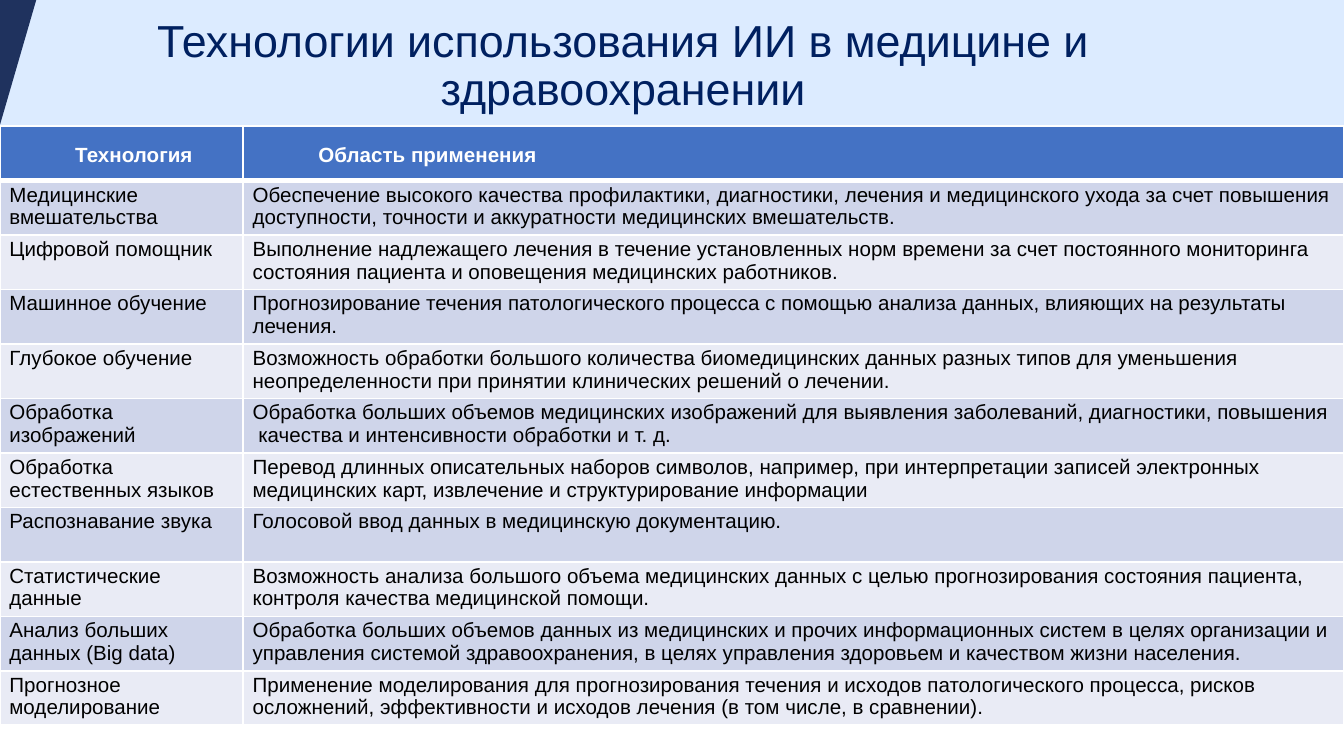
from typing import NamedTuple

from lxml import etree
from pptx import Presentation
from pptx.dml.color import RGBColor
from pptx.enum.shapes import MSO_SHAPE
from pptx.enum.text import MSO_ANCHOR, PP_ALIGN
from pptx.oxml.ns import qn
from pptx.util import Inches, Pt

RECTANGLE = MSO_SHAPE.RECTANGLE
TOP, MIDDLE = MSO_ANCHOR.TOP, MSO_ANCHOR.MIDDLE
CENTER = PP_ALIGN.CENTER

WHITE = RGBColor(0xFF, 0xFF, 0xFF)
BLACK = RGBColor(0x00, 0x00, 0x00)
PALE_BLUE = RGBColor(0xDC, 0xEB, 0xFF)
NAVY = RGBColor(0x1F, 0x32, 0x5E)
TITLE_BLUE = RGBColor(0x00, 0x20, 0x60)
HEADER_BLUE = RGBColor(0x44, 0x72, 0xC4)
BANDS = (RGBColor(0xCF, 0xD5, 0xEA), RGBColor(0xE9, 0xEB, 0xF5))

FONT = "Arial"
SLIDE_WIDTH = Inches(10)
SLIDE_HEIGHT = SLIDE_WIDTH * 9 // 16
BANNER_HEIGHT = Inches(0.93)
TABLE_TOP, TABLE_HEIGHT = Inches(0.94), Inches(4.46)
COLUMN_WIDTHS = (Inches(1.81), Inches(8.19))
THIN, THICK = Pt(1), Pt(3)


class Technology(NamedTuple):
    name: str
    use: str


HEADER = Technology("Технология", "Область применения")
TECHNOLOGIES = [
    Technology("Медицинские вмешательства",
               "Обеспечение высокого качества профилактики, диагностики, лечения и медицинского ухода "
               "за счет повышения доступности, точности и аккуратности медицинских вмешательств."),
    Technology("Цифровой помощник",
               "Выполнение надлежащего лечения в течение установленных норм времени за счет постоянного "
               "мониторинга состояния пациента и оповещения медицинских работников."),
    Technology("Машинное обучение",
               "Прогнозирование течения патологического процесса с помощью анализа данных, "
               "влияющих на результаты лечения."),
    Technology("Глубокое обучение",
               "Возможность обработки большого количества биомедицинских данных разных типов "
               "для уменьшения неопределенности при принятии клинических решений о лечении."),
    Technology("Обработка изображений",
               "Обработка больших объемов медицинских изображений для выявления заболеваний, "
               "диагностики, повышения  качества и интенсивности обработки и т. д."),
    Technology("Обработка естественных языков",
               "Перевод длинных описательных наборов символов, например, при интерпретации записей "
               "электронных медицинских карт, извлечение и структурирование информации"),
    Technology("Распознавание звука",
               "Голосовой ввод данных в медицинскую документацию."),
    Technology("Статистические данные",
               "Возможность анализа большого объема медицинских данных с целью прогнозирования "
               "состояния пациента, контроля качества медицинской помощи."),
    Technology("Анализ больших данных (Big data)",
               "Обработка больших объемов данных из медицинских и прочих информационных систем в целях "
               "организации и управления системой здравоохранения, в целях управления здоровьем "
               "и качеством жизни населения."),
    Technology("Прогнозное моделирование",
               "Применение моделирования для прогнозирования течения и исходов патологического процесса, "
               "рисков осложнений, эффективности и исходов лечения (в том числе, в сравнении)."),
]


def add_run(p, text: str, size: float, color: RGBColor, bold: bool = False) -> None:
    r = p.add_run()
    r.text = text
    r.font.name, r.font.size, r.font.bold = FONT, Pt(size), bold
    r.font.color.rgb = color


def paint(sp, color: RGBColor) -> None:
    sp.shadow.inherit = False
    sp.fill.solid()
    sp.fill.fore_color.rgb = color
    sp.line.fill.background()


def draw_banner(s) -> None:
    paint(s.shapes.add_shape(RECTANGLE, 0, 0, SLIDE_WIDTH, BANNER_HEIGHT), PALE_BLUE)
    builder = s.shapes.build_freeform(0, 0)
    builder.add_line_segments([(Inches(0.27), 0), (0, BANNER_HEIGHT)], close=True)
    paint(builder.convert_to_shape(), NAVY)


def draw_title(s, text: str) -> None:
    tf = s.shapes.add_textbox(Inches(0.69), Inches(0.09), Inches(7.89), Inches(0.5)).text_frame
    tf.word_wrap = True
    tf.vertical_anchor = TOP
    p = tf.paragraphs[0]
    p.alignment = CENTER
    p.line_spacing = 0.9
    add_run(p, text, 24, TITLE_BLUE)


def set_borders(cell, top: int, bottom: int) -> None:
    tc_pr = cell._tc.get_or_add_tcPr()
    for side, width in (("L", THIN), ("R", THIN), ("T", top), ("B", bottom)):
        line = etree.SubElement(tc_pr, qn(f"a:ln{side}"), w=str(width))
        fill = etree.SubElement(line, qn("a:solidFill"))
        etree.SubElement(fill, qn("a:srgbClr"), val=str(WHITE))


def fill_cell(cell, text: str, row: int) -> None:
    is_header = row == 0
    set_borders(cell, THICK if row == 1 else THIN, THICK if is_header else THIN)
    cell.fill.solid()
    cell.fill.fore_color.rgb = HEADER_BLUE if is_header else BANDS[(row - 1) % 2]
    cell.margin_left = cell.margin_right = Inches(0.07)
    cell.margin_top = cell.margin_bottom = Inches(0.02)
    cell.vertical_anchor = MIDDLE if is_header else TOP
    p = cell.text_frame.paragraphs[0]
    if is_header:
        p.line_spacing = 1.15
        p._p.get_or_add_pPr().set("indent", str(Inches(0.49)))
    add_run(p, text, 11, WHITE if is_header else BLACK, is_header)


def draw_table(s, rows: list[Technology]) -> None:
    table = s.shapes.add_table(len(rows), len(COLUMN_WIDTHS), 0, TABLE_TOP,
                               SLIDE_WIDTH, TABLE_HEIGHT).table
    table.horz_banding = False
    for column, width in zip(table.columns, COLUMN_WIDTHS):
        column.width = width
    for i, technology in enumerate(rows):
        for j, text in enumerate(technology):
            fill_cell(table.cell(i, j), text, i)


def main() -> None:
    prs = Presentation()
    prs.slide_width, prs.slide_height = SLIDE_WIDTH, SLIDE_HEIGHT
    s = prs.slides.add_slide(prs.slide_layouts[6])
    draw_banner(s)
    draw_table(s, [HEADER, *TECHNOLOGIES])
    draw_title(s, "Технологии использования ИИ в медицине и здравоохранении")
    prs.save("out.pptx")


if __name__ == "__main__":
    main()
